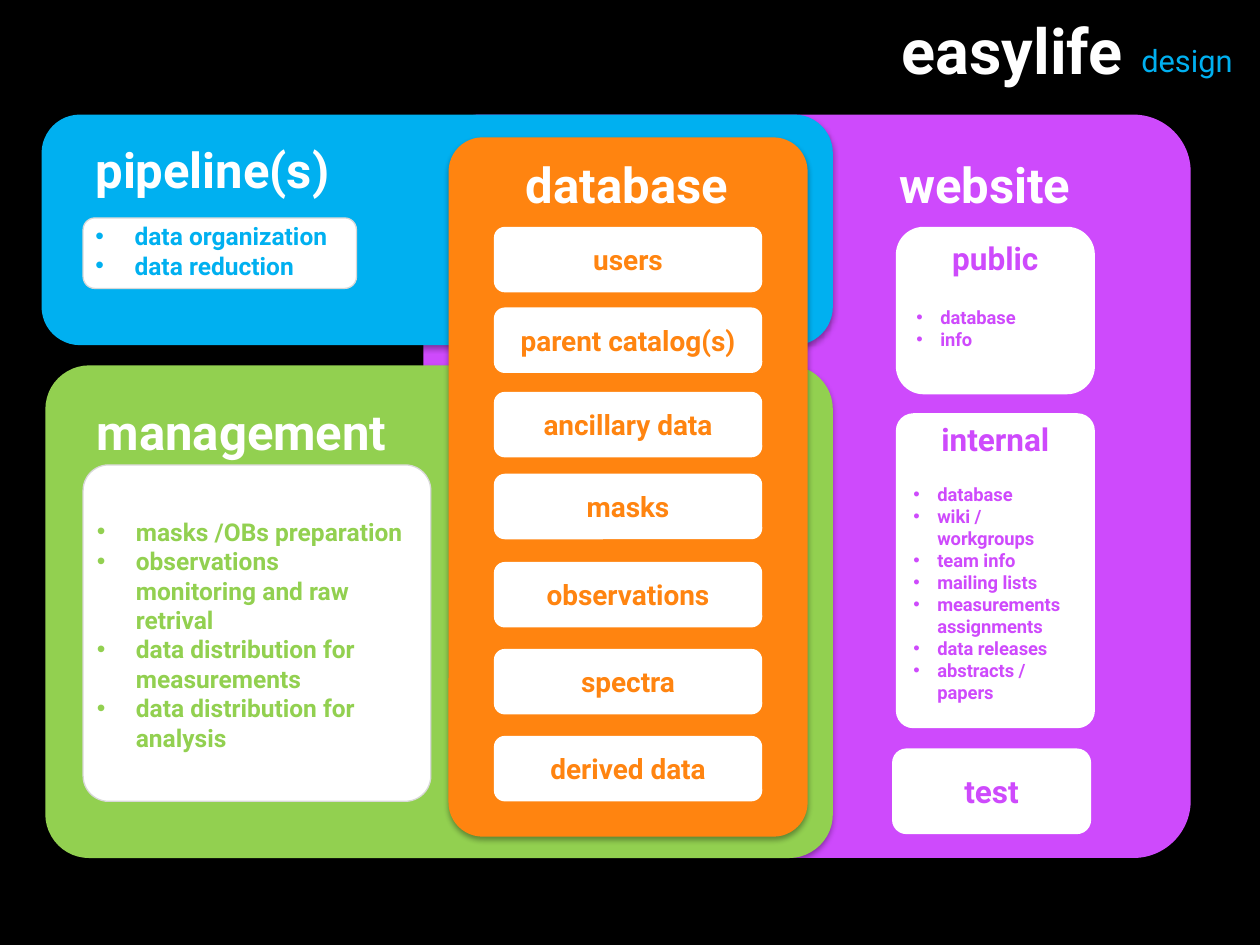
from dataclasses import dataclass
from typing import Optional

import pptx
import pptx.dml.color
import pptx.enum.shapes
import pptx.enum.text
import pptx.oxml
import pptx.oxml.ns
import pptx.util
from lxml import etree

ALIGN = pptx.enum.text.PP_ALIGN
ANCHOR = pptx.enum.text.MSO_ANCHOR
WIDTH, HEIGHT = 10, 7.5
COLUMNS, ROWS = 100, 75


@dataclass(frozen=True)
class Theme:
    font: str = "Roboto"
    background: str = "000000"
    paper: str = "FFFFFF"
    border: str = "D8D8D8"
    website: str = "CE4AFC"
    management: str = "92D050"
    pipeline: str = "00B0F0"
    database: str = "FF8410"
    title: float = 36
    subtitle: float = 17.6
    heading: float = 28
    card: float = 18
    table: float = 16
    item: float = 14
    small: float = 10.5


THEME = Theme()


@dataclass(frozen=True)
class Area:
    """A rectangle in grid columns and rows."""
    column: float
    row: float
    columns: float
    rows: float

    def lengths(self) -> list:
        across, down = WIDTH / COLUMNS, HEIGHT / ROWS
        return [pptx.util.Inches(value) for value in (
            self.column * across, self.row * down,
            self.columns * across, self.rows * down)]


@dataclass(frozen=True)
class Style:
    size: float
    color: str
    bold: bool = True
    align: ALIGN = ALIGN.LEFT


@dataclass(frozen=True)
class Listing:
    """Bulleted items below a heading."""
    items: tuple
    style: Style
    gap: float
    indent: float


def rgb(color: str) -> pptx.dml.color.RGBColor:
    return pptx.dml.color.RGBColor.from_string(color)


def add_shadow(shape) -> None:
    effects = pptx.oxml.parse_xml(
        f'<a:effectLst {pptx.oxml.ns.nsdecls("a")}>'
        '<a:outerShdw blurRad="39370" dist="22860" dir="5400000" rotWithShape="0">'
        '<a:srgbClr val="000000"><a:alpha val="35000"/></a:srgbClr>'
        '</a:outerShdw></a:effectLst>')
    properties = shape.element.spPr
    for old in properties.findall(pptx.oxml.ns.qn("a:effectLst")):
        properties.remove(old)
    properties.append(effects)


def add_panel(page, area: Area, color: str, corner: Optional[float] = None,
              line: Optional[str] = None, shadow: bool = False):
    panel = page.shapes.add_shape(
        pptx.enum.shapes.MSO_SHAPE.ROUNDED_RECTANGLE, *area.lengths())
    if corner is not None:
        panel.adjustments[0] = corner
    panel.fill.solid()
    panel.fill.fore_color.rgb = rgb(color)
    if line:
        panel.line.color.rgb = rgb(line)
        panel.line.width = pptx.util.Pt(0.75)
    else:
        panel.line.fill.background()
    panel.shadow.inherit = False
    if shadow:
        add_shadow(panel)
    return panel


def format_para(para, text: str, style: Style) -> None:
    para.text = text
    para.alignment = style.align
    for span in para.runs:
        span.font.name = THEME.font
        span.font.size = pptx.util.Pt(style.size)
        span.font.bold = style.bold
        span.font.color.rgb = rgb(style.color)


def add_bullet(para, indent: float) -> None:
    properties = para._p.get_or_add_pPr()
    length = pptx.util.Inches(indent)
    properties.set("marL", str(length))
    properties.set("indent", str(-length))
    font = etree.SubElement(properties, pptx.oxml.ns.qn("a:buFont"))
    font.set("typeface", "Arial")
    bullet = etree.SubElement(properties, pptx.oxml.ns.qn("a:buChar"))
    bullet.set("char", "•")


def write(shape, heading: str, style: Style, listing: Optional[Listing] = None,
          anchor: ANCHOR = ANCHOR.MIDDLE, wrap: bool = True) -> None:
    frame = shape.text_frame
    frame.word_wrap = wrap
    frame.vertical_anchor = anchor
    format_para(frame.paragraphs[0], heading, style)
    if listing:
        for index, item in enumerate(listing.items):
            para = frame.add_paragraph()
            format_para(para, item, listing.style)
            if index == 0:
                para.space_before = pptx.util.Pt(listing.gap)
            add_bullet(para, listing.indent)


def add_label(page, area: Area, text: str, style: Style,
              listing: Optional[Listing] = None,
              anchor: ANCHOR = ANCHOR.TOP, wrap: bool = False) -> None:
    box = page.shapes.add_textbox(*area.lengths())
    write(box, text, style, listing, anchor, wrap)


def add_card(page, area: Area, text: str, style: Style,
             corner: Optional[float] = None, listing: Optional[Listing] = None,
             top: Optional[float] = None) -> None:
    card = add_panel(page, area, THEME.paper, corner)
    write(card, text, style, listing, ANCHOR.MIDDLE if top is None else ANCHOR.TOP)
    if top is not None:
        card.text_frame.margin_top = pptx.util.Inches(top)


def main() -> None:
    deck = pptx.Presentation()
    deck.slide_width = pptx.util.Inches(WIDTH)
    deck.slide_height = pptx.util.Inches(HEIGHT)
    page = deck.slides.add_slide(deck.slide_layouts[6])
    page.background.fill.solid()
    page.background.fill.fore_color.rgb = rgb(THEME.background)

    heading = Style(THEME.heading, THEME.paper)
    centred = Style(THEME.heading, THEME.paper, align=ALIGN.CENTER)
    card = Style(THEME.card, THEME.website, align=ALIGN.CENTER)
    small = Style(THEME.small, THEME.website)
    table = Style(THEME.table, THEME.database, align=ALIGN.CENTER)

    # Website
    add_panel(page, Area(33.6, 9.1, 60.9, 59), THEME.website, 0.077, shadow=True)
    add_card(page, Area(71.1, 18, 15.8, 13.3), "public", card, top=0.03,
             listing=Listing(("database", "info"), small, 17, 0.19))
    internal = ("database", "wiki /\vworkgroups", "team info", "mailing lists",
                "measurements\vassignments", "data releases", "abstracts / papers")
    add_card(page, Area(71.1, 32.8, 15.8, 25), "internal", card, 0.088,
             Listing(internal, small, 14.5, 0.19), top=0.01)
    add_label(page, Area(70.4, 11.8, 16.4, 5.7), "website", heading)

    # Management, pipeline and database panels
    add_panel(page, Area(3.6, 29, 62.5, 39.1), THEME.management, 0.089, shadow=True)
    add_panel(page, Area(3.3, 9.1, 62.8, 18.3), THEME.pipeline, shadow=True)
    add_panel(page, Area(35.6, 10.9, 28.5, 55.5), THEME.database, 0.095, shadow=True)

    # Database tables
    add_label(page, Area(40.2, 11.8, 19.1, 5.7), "database", centred)
    tables = {"users": 18, "parent catalog(s)": 24.4, "ancillary data": 31.1,
              "masks": 37.6, "observations": 44.6, "spectra": 51.5,
              "derived data": 58.4}
    for name, row in tables.items():
        add_card(page, Area(39.2, row, 21.3, 5.2), name, table)

    # Slide title
    add_label(page, Area(40.6, 0.1, 49.5, 7.7), "easylife",
              Style(THEME.title, THEME.paper, align=ALIGN.RIGHT),
              anchor=ANCHOR.MIDDLE, wrap=True)
    add_label(page, Area(89.6, 1.5, 10.4, 6.5), "design",
              Style(THEME.subtitle, THEME.pipeline, bold=False),
              anchor=ANCHOR.MIDDLE, wrap=True)

    # Task lists of the pipeline and of management
    add_panel(page, Area(6.6, 36.9, 27.6, 26.7), THEME.paper, 0.076, THEME.border)
    add_panel(page, Area(6.6, 17.3, 21.7, 5.6), THEME.paper, line=THEME.border)
    add_label(page, Area(6.6, 10.6, 21.7, 12.3), "pipeline(s)", heading,
              Listing(("data organization", "data reduction"),
                      Style(THEME.item, THEME.pipeline), 13, 0.31))
    duties = ("masks /OBs preparation",
              "observations\vmonitoring and raw\vretrival",
              "data distribution for\vmeasurements",
              "data distribution for\vanalysis")
    add_label(page, Area(6.7, 31.4, 27.7, 32.1), "management", heading,
              Listing(duties, Style(THEME.item, THEME.management), 32, 0.31))

    # Test site
    add_card(page, Area(70.8, 59.4, 15.8, 6.8), "test", card)

    deck.save("out.pptx")


if __name__ == "__main__":
    main()
